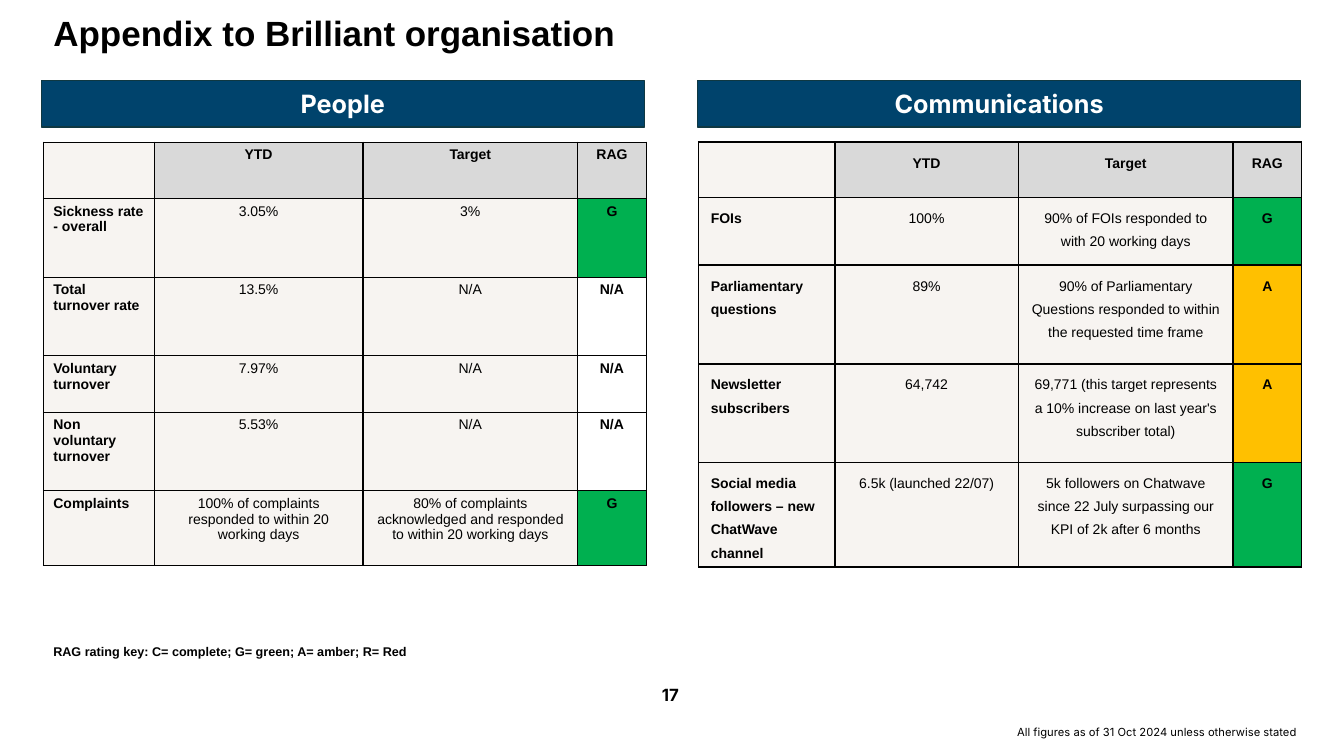
from dataclasses import dataclass

from lxml.etree import SubElement
from pptx import Presentation
from pptx.dml.color import RGBColor
from pptx.enum.shapes import MSO_SHAPE as Shape
from pptx.enum.text import MSO_ANCHOR as Anchor, PP_ALIGN as Align
from pptx.oxml.ns import qn
from pptx.util import Inches, Pt

TITLE = "Appendix to Brilliant organisation"
HEADINGS = ["", "YTD", "Target", "RAG"]
PANELS = [
    {
        "name": "People",
        "banner_left": 0.41,
        "table_left": 0.43,
        "columns": [1.1, 2.07, 2.13, 0.68],
        "heights": [0.56, 0.78, 0.78, 0.56, 0.78, 0.74],
        "margins": (0.1, 0.05),
        "line_spacing": None,
        "border": 1,
        "rows": [
            ("Sickness rate - overall", "3.05%", "3%", "G"),
            ("Total turnover rate", "13.5%", "N/A", "N/A"),
            ("Voluntary turnover", "7.97%", "N/A", "N/A"),
            ("Non voluntary turnover", "5.53%", "N/A", "N/A"),
            ("Complaints", "100% of complaints responded to within 20 working days",
             "80% of complaints acknowledged and responded to within 20 working days", "G"),
        ],
    },
    {
        "name": "Communications",
        "banner_left": 6.92,
        "table_left": 6.93,
        "columns": [1.35, 1.82, 2.13, 0.68],
        "heights": [0.55, 0.67, 0.98, 0.98, 0.98],
        "margins": (0.12, 0.06),
        "line_spacing": Pt(16.5),
        "border": 1.25,
        "rows": [
            ("FOIs", "100%", "90% of FOIs responded to with 20 working days", "G"),
            ("Parliamentary questions", "89%",
             "90% of Parliamentary Questions responded to within the requested time frame", "A"),
            ("Newsletter subscribers", "64,742",
             "69,771 (this target represents a 10% increase on last year's subscriber total)", "A"),
            ("Social media followers – new ChatWave channel", "6.5k (launched 22/07)",
             "5k followers on Chatwave since 22 July surpassing our KPI of 2k after 6 months", "G"),
        ],
    },
]


@dataclass(frozen=True)
class Theme:
    body: str = "Arial"
    accent: str = "Inter"
    black: str = "000000"
    white: str = "FFFFFF"
    navy: str = "00436C"
    navy_edge: str = "0F3842"
    cell: str = "F7F4F1"
    heading: str = "D9D9D9"
    green: str = "00B050"
    amber: str = "FFC000"
    title_size: int = 25
    banner_size: int = 18
    page_size: int = 12
    table_size: int = 10
    key_size: int = 9
    note_size: int = 8


THEME = Theme()
RAG_FILLS = {"G": THEME.green, "A": THEME.amber, "N/A": THEME.white}
NOTES = [
    ("17", (5.15, 6.74, 3, 0.4), THEME.accent, THEME.page_size, True, Align.CENTER),
    ("All figures as of 31 Oct 2024 unless otherwise stated",
     (9.99, 7.15, 3.27, 0.24), THEME.accent, THEME.note_size, False, Align.LEFT),
    ("RAG rating key: C= complete; G= green; A= amber; R= Red",
     (0.43, 6.34, 3.81, 0.25), THEME.body, THEME.key_size, True, Align.LEFT),
]


def write(frame, text, font, size, bold, align, color=THEME.black):
    frame.text = text
    frame.word_wrap = True
    paragraph = frame.paragraphs[0]
    paragraph.alignment = align
    paragraph.font.name = font
    paragraph.font.size = Pt(size)
    paragraph.font.bold = bold
    paragraph.font.color.rgb = RGBColor.from_string(color)
    return paragraph


def add_borders(cell, width):
    properties = cell._tc.get_or_add_tcPr()
    for side in ("a:lnL", "a:lnR", "a:lnT", "a:lnB"):
        line = SubElement(properties, qn(side), w=str(Pt(width)))
        fill = SubElement(line, qn("a:solidFill"))
        SubElement(fill, qn("a:srgbClr"), val=THEME.black)


def cell_fill(row, column, text):
    if row == 0:
        return THEME.heading if column else THEME.cell
    return RAG_FILLS[text] if column == 3 else THEME.cell


def add_banner(slide, panel):
    banner = slide.shapes.add_shape(Shape.RECTANGLE, Inches(panel["banner_left"]),
                                    Inches(0.8), Inches(5.98), Inches(0.46))
    banner.shadow.inherit = False
    banner.fill.solid()
    banner.fill.fore_color.rgb = RGBColor.from_string(THEME.navy)
    banner.line.color.rgb = RGBColor.from_string(THEME.navy_edge)
    banner.line.width = Pt(1)
    banner.text_frame.vertical_anchor = Anchor.MIDDLE
    write(banner.text_frame, panel["name"], THEME.accent, THEME.banner_size,
          True, Align.CENTER, THEME.white)


def add_panel_table(slide, panel):
    rows = [HEADINGS, *panel["rows"]]
    table = slide.shapes.add_table(
        len(rows), len(HEADINGS), Inches(panel["table_left"]), Inches(1.41),
        Inches(sum(panel["columns"])), Inches(sum(panel["heights"]))).table
    for column, width in zip(table.columns, panel["columns"]):
        column.width = Inches(width)
    for row, height in zip(table.rows, panel["heights"]):
        row.height = Inches(height)
    side, edge = map(Inches, panel["margins"])
    for r, values in enumerate(rows):
        for c, text in enumerate(values):
            cell = table.cell(r, c)
            cell.margin_left = cell.margin_right = side
            cell.margin_top = cell.margin_bottom = edge
            add_borders(cell, panel["border"])
            cell.fill.solid()
            cell.fill.fore_color.rgb = RGBColor.from_string(cell_fill(r, c, text))
            paragraph = write(cell.text_frame, text, THEME.body, THEME.table_size,
                              r == 0 or c in (0, 3), Align.CENTER if c else Align.LEFT)
            paragraph.line_spacing = panel["line_spacing"]


def main():
    presentation = Presentation()
    presentation.slide_width = Inches(13.33)
    presentation.slide_height = Inches(7.5)
    slide = presentation.slides.add_slide(presentation.slide_layouts[5])

    title = slide.shapes.title
    title.left, title.top, title.width, title.height = map(Inches, (0.43, 0.11, 12.11, 0.78))
    title.text_frame.vertical_anchor = Anchor.TOP
    write(title.text_frame, TITLE, THEME.body, THEME.title_size, True,
          Align.LEFT).line_spacing = 0.9

    for panel in PANELS:
        add_banner(slide, panel)
        add_panel_table(slide, panel)

    for text, box, *style in NOTES:
        note = slide.shapes.add_textbox(*map(Inches, box))
        write(note.text_frame, text, *style)

    presentation.save("out.pptx")


if __name__ == "__main__":
    main()
